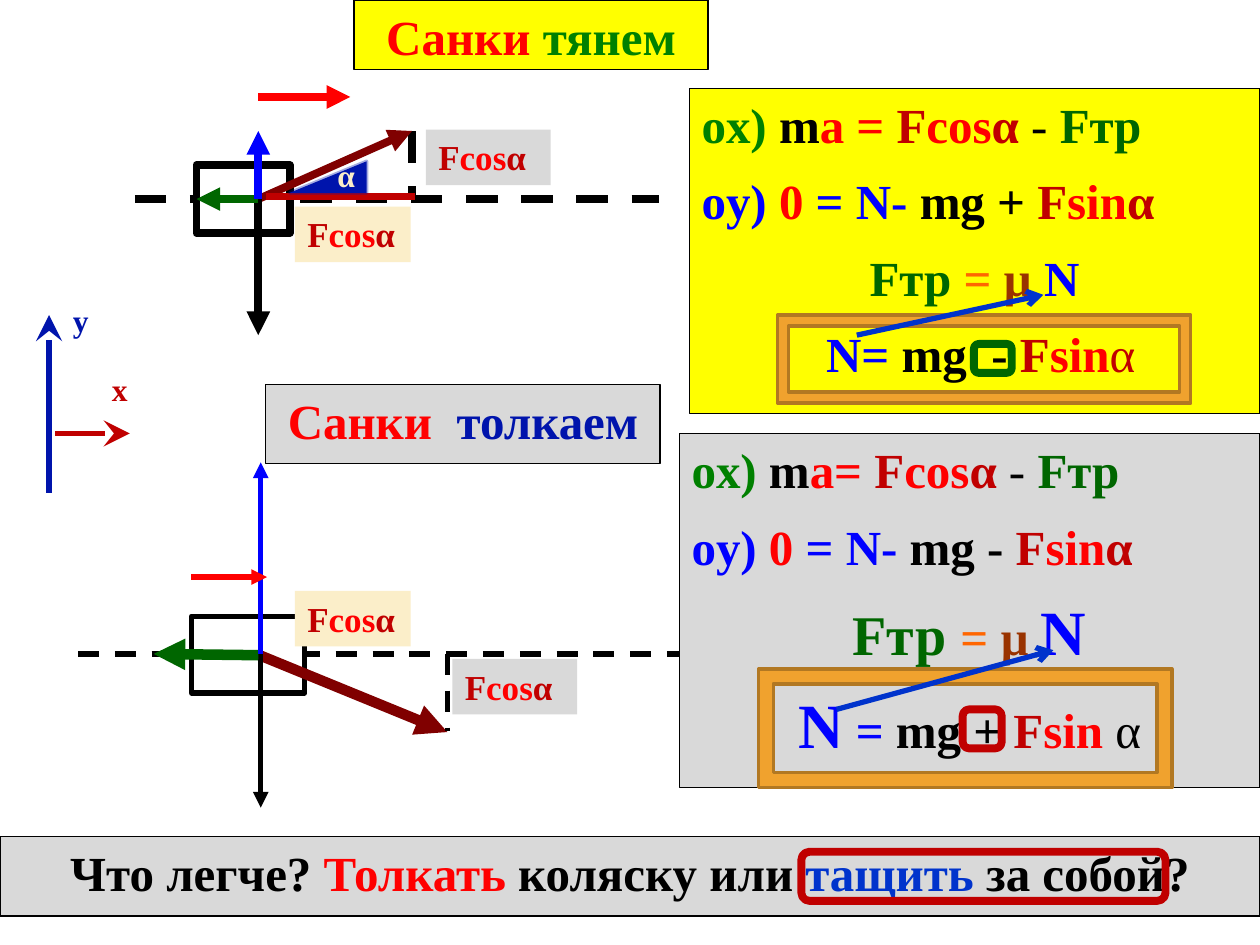
from lxml.etree import SubElement
from pptx import Presentation
from pptx.dml.color import RGBColor
from pptx.enum.shapes import MSO_CONNECTOR as Connector, MSO_SHAPE as Shape
from pptx.enum.dml import MSO_LINE as Dash
from pptx.enum.text import MSO_ANCHOR as Anchor, PP_ALIGN as Align
from pptx.oxml.ns import qn
from pptx.util import Inches, Pt

BLACK, RED, CRIMSON, MAROON = "000000", "FF0000", "C00000", "800000"
GREEN, LIGHT_GREEN, BLUE, NAVY, ROYAL = "006600", "008000", "0000FF", "0014AC", "0033CC"
YELLOW, GREY, CREAM, WHITE = "FFFF00", "D9D9D9", "FBEEC9", "FFFFFF"
ORANGE, BROWN, GOLD, DARK_GOLD = "FF6600", "993300", "F0A22E", "B27822"


def color(value):
    return RGBColor.from_string(value)


class Board:
    """Style and current slide; positions are columns and rows of a 100 x 75 grid."""
    font, cell = "Times New Roman", 0.1

    def __init__(self, slide):
        self.slide = slide

    def grid(self, *lengths):
        return [Inches(length * self.cell) for length in lengths]

    def box(self, area, fill=None, line=None, width=0.75, kind=Shape.RECTANGLE):
        shape = self.slide.shapes.add_shape(kind, *self.grid(*area))
        shape.shadow.inherit = False
        if fill:
            shape.fill.solid()
            shape.fill.fore_color.rgb = color(fill)
        else:
            shape.fill.background()
        if line:
            shape.line.color.rgb = color(line)
            shape.line.width = Pt(width)
        else:
            shape.line.fill.background()
        return shape

    def fill_text(self, shape, paragraphs, size=28, after=10):
        """Each paragraph is (alignment, runs); a run is (text, colour[, size[, bold]])."""
        frame = shape.text_frame
        frame.word_wrap = True
        frame.vertical_anchor = Anchor.TOP
        for index, (alignment, runs) in enumerate(paragraphs):
            paragraph = frame.add_paragraph() if index else frame.paragraphs[0]
            paragraph.alignment = alignment
            paragraph.space_after = Pt(after)
            for text, tint, *extra in runs:
                run = paragraph.add_run()
                run.text = text
                run.font.name = self.font
                run.font.color.rgb = color(tint)
                run.font.size = Pt(extra[0] if extra else size)
                run.font.bold = extra[1] if len(extra) > 1 else True

    def panel(self, area, fill, *paragraphs):
        self.fill_text(self.box(area, fill, BLACK), paragraphs)

    def force_label(self, area, fill):
        runs = [("F", CRIMSON), ("cos", RED), ("α", CRIMSON)]
        self.fill_text(self.box(area, fill), [(Align.LEFT, runs)], size=20, after=0)

    def letter(self, area, text, tint):
        shape = self.slide.shapes.add_textbox(*self.grid(*area))
        self.fill_text(shape, [(Align.LEFT, [(text, tint)])], size=18, after=0)

    def line(self, start, end, tint, width, arrow=None, arrow_size="med", dashed=False):
        connector = self.slide.shapes.add_connector(
            Connector.STRAIGHT, *self.grid(*start, *end))
        connector.line.color.rgb = color(tint)
        connector.line.width = Pt(width)
        if dashed:
            connector.line.dash_style = Dash.DASH
        if arrow:
            SubElement(connector.line._get_or_add_ln(), qn("a:tailEnd"),
                       type=arrow, w=arrow_size, len=arrow_size)
        SubElement(connector._element.spPr, qn("a:effectLst"))
        return connector

    def arrow(self, start, end, tint, width, kind="triangle", size="med"):
        return self.line(start, end, tint, width, kind, size)


def motion_equations(equals, sign):
    """Projections on both axes; the sign of the vertical force differs."""
    along = [("ox) ", LIGHT_GREEN), ("m", BLACK), (equals, RED), ("F", CRIMSON),
             ("cos", RED), ("α", CRIMSON), (" - ", BLACK, 28, False), ("Fтр", GREEN)]
    across = [("oy)", BLUE), (" 0", RED), (" = N- ", BLUE), (f"mg {sign} ", BLACK),
              ("F", CRIMSON), ("sin", RED), ("α", CRIMSON)]
    return (Align.LEFT, along), (Align.LEFT, across)


def draw_pulling(board):
    origin = (20.5, 15.8)
    board.line((10.7, 15.8), (52.3, 15.8), BLACK, 4.5, dashed=True)
    board.line((32.7, 10.4), (32.7, 15.8), BLACK, 4.5, dashed=True)
    sled = board.box((15.6, 13.1, 7.4, 5.4), WHITE, BLACK, 4.5)
    board.arrow(origin, (32.7, 10.4), MAROON, 4.5)
    board.arrow(origin, (20.5, 26.6), BLACK, 4.5)
    friction = board.arrow(origin, (15.6, 15.8), GREEN, 4.5)
    friction.end_connect(sled, 1)
    board.arrow(origin, (20.5, 10.4), BLUE, 4.5)
    board.arrow((20.5, 7.7), (27.8, 7.7), RED, 4.5)


def draw_pushing(board):
    center = (20.7, 51.9)
    board.line((6.2, 51.9), (57, 51.9), BLACK, 3, dashed=True)
    board.box((15.2, 48.9, 9, 6.1), WHITE, BLACK, 3)
    board.arrow((20.6, 52), (35.5, 58.1), MAROON, 6)
    board.arrow(center, (20.7, 64.1), BLACK, 3)
    board.arrow((20.5, 52), (12.2, 51.9), GREEN, 6)
    board.arrow(center, (20.7, 36.7), BLUE, 3)
    board.line((35.5, 51.9), (35.5, 58), BLACK, 3, dashed=True)
    board.arrow((15.2, 45.8), (21.2, 45.8), RED, 3)


def draw_axes(board):
    board.arrow((3.9, 39.1), (3.9, 25), NAVY, 3, "stealth", "lg")
    board.arrow((4.4, 34.4), (10.3, 34.4), CRIMSON, 3, "stealth", "lg")
    board.letter((7.9, 28.9, 4.7, 4), "x", CRIMSON)
    board.letter((4.8, 23.4, 4.7, 4), "y", NAVY)


def draw_angle(board):
    board.line((21.1, 15.6), (32.9, 15.6), CRIMSON, 4.5)
    wedge = board.box((24.8, 11, 2.5, 6.1), NAVY, NAVY, 2, Shape.RIGHT_TRIANGLE)
    wedge.rotation = 270
    tint = wedge.line._get_or_add_ln().find(".//" + qn("a:srgbClr"))
    SubElement(tint, qn("a:alpha"), val="35000")
    board.letter((25.8, 11.9, 3.6, 4), "α", CREAM)


def main():
    presentation = Presentation()
    presentation.slide_width, presentation.slide_height = Inches(10), Inches(7.5)
    board = Board(presentation.slides.add_slide(presentation.slide_layouts[6]))

    # Force diagrams with their titles
    draw_pulling(board)
    board.panel((28.1, 0, 28.1, 5.5), YELLOW,
                (Align.CENTER, [("Санки ", RED), ("тянем", LIGHT_GREEN)]))
    draw_pushing(board)
    board.panel((21.1, 30.5, 31.3, 6.3), GREY,
                (Align.CENTER, [("Санки  ", RED), ("толкаем", NAVY)]))

    # Equations for pushing
    board.panel((53.9, 34.4, 46.1, 28.1), GREY, *motion_equations("a= ", "-"),
                (Align.CENTER, [("Fтр ", GREEN, 32), ("=", ORANGE), (" µ ", BROWN),
                                ("N", BLUE, 36)]),
                (Align.CENTER, [("N", BLUE, 36), (" = ", BLUE), ("mg + ", BLACK),
                                ("F", CRIMSON), ("sin ", RED), ("α", BLACK, 28, False)]))
    draw_axes(board)
    board.box((60.2, 53.1, 32.8, 9.4), GOLD, DARK_GOLD, 2, Shape.FRAME)

    # Equations for pulling
    board.panel((54.7, 7, 45.3, 25.8), YELLOW, *motion_equations("a = ", "+"),
                (Align.CENTER, [("Fтр ", GREEN), ("=", ORANGE), (" µ", BROWN), (" N", BLUE)]),
                (Align.CENTER, [(" N= ", BLUE), ("mg  - ", BLACK), ("F", CRIMSON),
                                ("sin", RED), ("α", CRIMSON, 28, False)]))
    board.box((61.7, 25, 32.8, 7), GOLD, DARK_GOLD, 2, Shape.FRAME)

    # Closing question
    board.panel((0, 66.4, 100, 6.3), GREY,
                (Align.CENTER, [("Что легче? ", BLACK), ("Толкать", RED),
                                (" коляску или ", BLACK), ("тащить", ROYAL),
                                (" за собой?", BLACK)]))

    # Angle and force projections
    draw_angle(board)
    for left, top, width, fill in [(23.4, 16.4, 9.2, CREAM), (33.8, 10.3, 9.9, GREY),
                                   (23.4, 46.9, 9.2, CREAM), (35.9, 52.3, 9.9, GREY)]:
        board.force_label((left, top, width, 4.4), fill)

    # Highlights and substitution arrows
    for area, tint in [((77.3, 27.3, 3, 2.3), GREEN), ((76.4, 56.3, 3.1, 3.1), CRIMSON),
                       ((63.6, 67.6, 28.9, 3.9), CRIMSON)]:
        board.box(area, None, tint, 4.5, Shape.ROUNDED_RECTANGLE)
    for start, end in [((68, 26.6), (82.8, 23.4)), ((66.4, 56.3), (83.6, 51.6))]:
        board.arrow(start, end, ROYAL, 3, "arrow")

    presentation.save("out.pptx")


if __name__ == "__main__":
    main()
